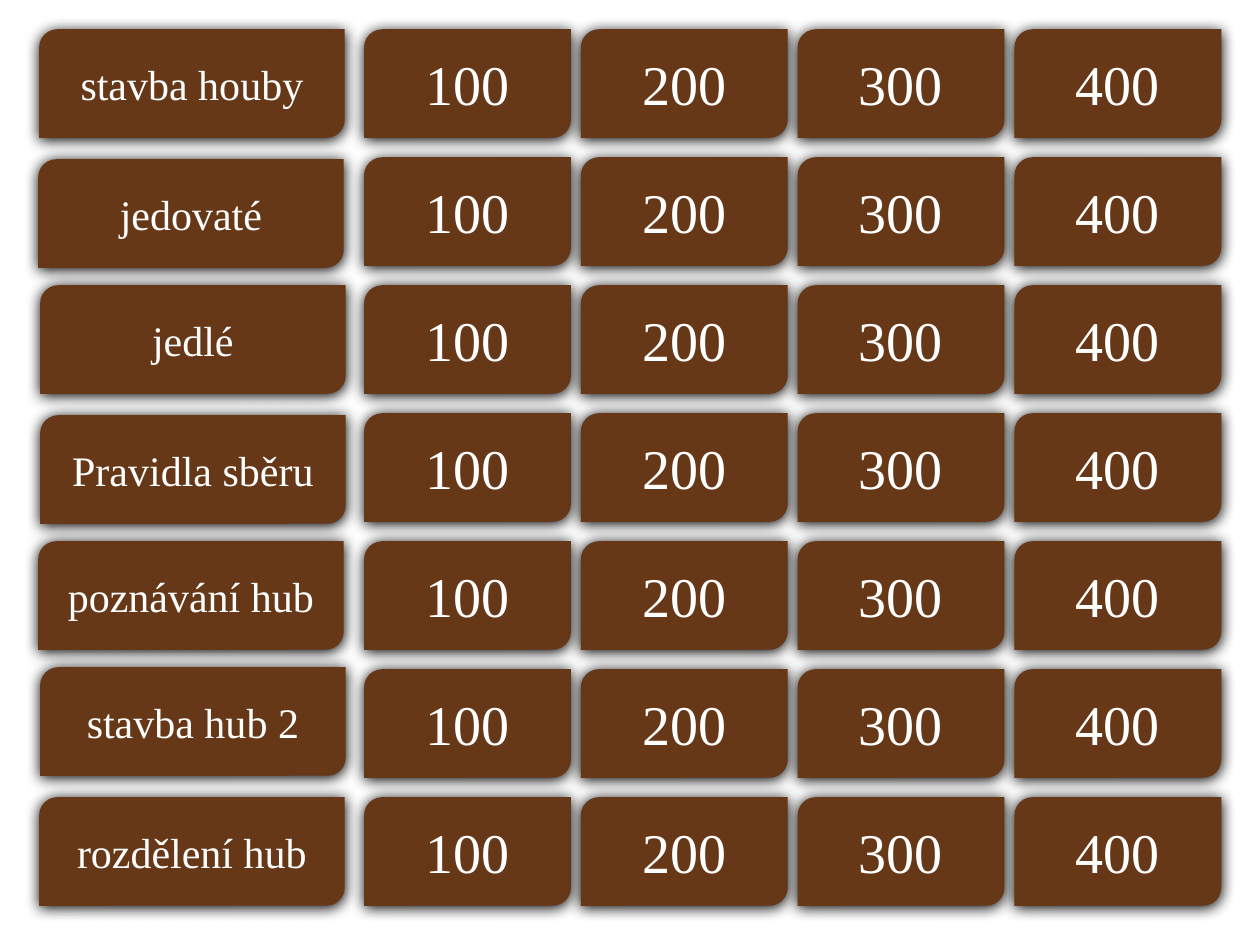
from lxml import etree
from pptx import Presentation
from pptx.dml.color import RGBColor
from pptx.enum import shapes, text
from pptx.oxml import ns
from pptx.util import Cm, Pt

BROWN, WHITE, BLACK = "663817", "FFFFFF", "000000"
TOP, ROW_STEP, HEIGHT = 0.59, 2.58, 2.19
TOPIC_WIDTH = 6.16
POINTS_LEFT, POINTS_STEP, POINTS_WIDTH = 7.34, 4.37, 4.17

# Topic, left edge and vertical shift from its row, in cm
topics = [
    ("stavba houby", 0.79, 0),
    ("jedovaté", 0.77, 0.04),
    ("jedlé", 0.81, 0),
    ("Pravidla sběru", 0.81, 0.04),
    ("poznávání hub", 0.77, 0),
    ("stavba hub 2", 0.81, -0.04),
    ("rozdělení hub", 0.79, 0),
]
points = ["100", "200", "300", "400"]

prs = Presentation()
prs.slide_width, prs.slide_height = Cm(25.4), Cm(19.05)
slide = prs.slides.add_slide(prs.slide_layouts[6])


def add_soft_shadow(shape):
    shape.shadow.inherit = False
    effects = shape._element.spPr.find(ns.qn("a:effectLst"))
    shadow = etree.SubElement(effects, ns.qn("a:outerShdw"), blurRad=str(Pt(8.5)),
                              dist=str(Pt(1)), dir="5400000", algn="ctr", rotWithShape="0")
    etree.SubElement(shadow, ns.qn("a:srgbClr"), val=BLACK)


def add_tile(label, left, top, width, size):
    tile = slide.shapes.add_shape(shapes.MSO_SHAPE.ROUND_2_DIAG_RECTANGLE,
                                  Cm(left), Cm(top), Cm(width), Cm(HEIGHT))
    tile.fill.solid()
    tile.fill.fore_color.rgb = RGBColor.from_string(BROWN)
    tile.line.fill.background()
    add_soft_shadow(tile)
    frame = tile.text_frame
    frame.text = label
    frame.vertical_anchor = text.MSO_ANCHOR.MIDDLE
    paragraph = frame.paragraphs[0]
    paragraph.alignment = text.PP_ALIGN.CENTER
    paragraph.font.name = "Times New Roman"
    paragraph.font.size = Pt(size)
    paragraph.font.color.rgb = RGBColor.from_string(WHITE)


for row, (topic, left, shift) in enumerate(topics):
    add_tile(topic, left, TOP + row * ROW_STEP + shift, TOPIC_WIDTH, 24)

for row in range(len(topics)):
    for column, value in enumerate(points):
        add_tile(value, POINTS_LEFT + column * POINTS_STEP, TOP + row * ROW_STEP,
                 POINTS_WIDTH, 32)

prs.save("out.pptx")
